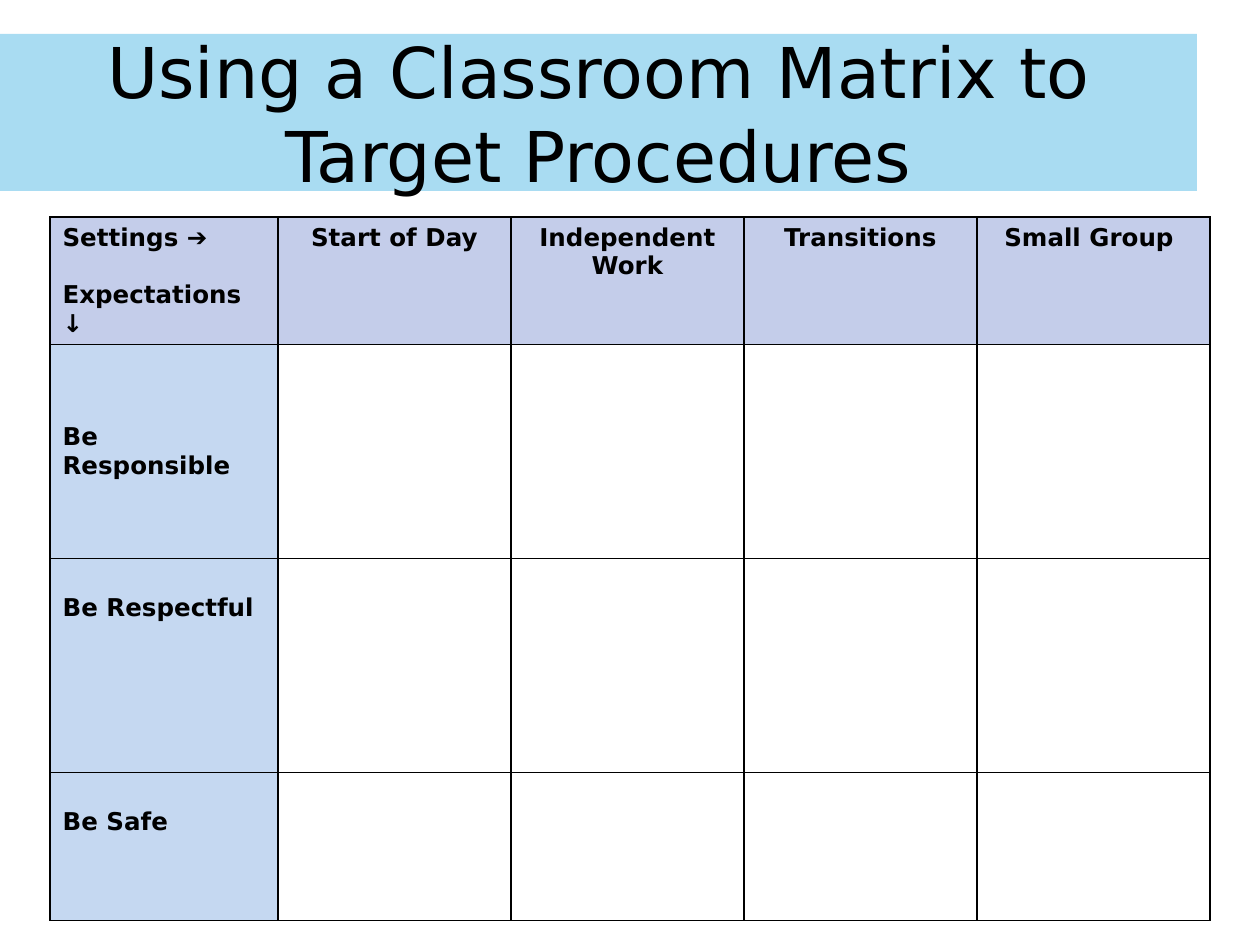
from lxml import etree
from pptx import Presentation, util as u
from pptx.dml.color import RGBColor
from pptx.enum import text
from pptx.oxml import ns

TITLE = "Using a Classroom Matrix to Target Procedures"
CORNER = ["Settings ➔", "Expectations ↓"]
SETTINGS = ["Start of Day", "Independent Work", "Transitions", "Small Group "]
EXPECTATIONS = ["Be Responsible", "Be Respectful", "Be Safe"]

FONT = "DejaVu Sans"
BLACK = RGBColor(0, 0, 0)
WHITE = RGBColor(255, 255, 255)
SKY = RGBColor(0xA9, 0xDC, 0xF2)
LAVENDER = RGBColor(0xC4, 0xCD, 0xEA)
PALE_BLUE = RGBColor(0xC5, 0xD8, 0xF1)

PX = 914400 // 126
COLUMNS = [228] + [233] * len(SETTINGS)
ROWS = [127, 214, 214, 148]
TABLE_LEFT, TABLE_TOP = 50, 217
LINE_GAP = 29


def px(length):
    return u.Emu(length * PX)


def write(frame, lines, size=14, bold=True, align=text.PP_ALIGN.LEFT, gap=0):
    for index, line in enumerate(lines):
        para = frame.paragraphs[0] if index == 0 else frame.add_paragraph()
        para.alignment = align
        if index:
            para.space_before = u.Pt(gap)
        span = para.add_run()
        span.text = line
        span.font.name = FONT
        span.font.size = u.Pt(size)
        span.font.bold = bold
        span.font.color.rgb = BLACK


def add_borders(cell):
    properties = cell._tc.get_or_add_tcPr()
    for index, side in enumerate(("lnL", "lnR", "lnT", "lnB")):
        line = etree.Element(ns.qn("a:" + side), w=str(u.Pt(1)))
        fill = etree.SubElement(line, ns.qn("a:solidFill"))
        etree.SubElement(fill, ns.qn("a:srgbClr"), val=str(BLACK))
        properties.insert(index, line)


deck = Presentation()
deck.slide_width, deck.slide_height = px(1260), px(945)
page = deck.slides.add_slide(deck.slide_layouts[5])

title = page.shapes.title
title.left, title.top, title.width, title.height = px(0), px(34), px(1197), px(157)
title.fill.solid()
title.fill.fore_color.rgb = SKY
title.text_frame.auto_size = text.MSO_AUTO_SIZE.NONE
title.text_frame.word_wrap = True
title.text_frame.vertical_anchor = text.MSO_ANCHOR.MIDDLE
write(title.text_frame, [TITLE], size=40, bold=False, align=text.PP_ALIGN.CENTER)

matrix = page.shapes.add_table(
    len(ROWS), len(COLUMNS), px(TABLE_LEFT), px(TABLE_TOP), px(sum(COLUMNS)), px(sum(ROWS))
).table
matrix.first_row = matrix.horz_banding = False
for column, width in zip(matrix.columns, COLUMNS):
    column.width = px(width)
for row, height in zip(matrix.rows, ROWS):
    row.height = px(height)

for r in range(len(ROWS)):
    for c in range(len(COLUMNS)):
        cell = matrix.cell(r, c)
        cell.fill.solid()
        cell.fill.fore_color.rgb = LAVENDER if r == 0 else PALE_BLUE if c == 0 else WHITE
        add_borders(cell)

write(matrix.cell(0, 0).text_frame, CORNER, gap=16.3)
for c, setting in enumerate(SETTINGS, 1):
    write(matrix.cell(0, c).text_frame, [setting], align=text.PP_ALIGN.CENTER)
for r, expectation in enumerate(EXPECTATIONS, 1):
    cell = matrix.cell(r, 0)
    write(cell.text_frame, [expectation])
    if r == 1:
        cell.vertical_anchor = text.MSO_ANCHOR.MIDDLE
    else:
        cell.margin_top = px(6 + LINE_GAP)

deck.save("out.pptx")
